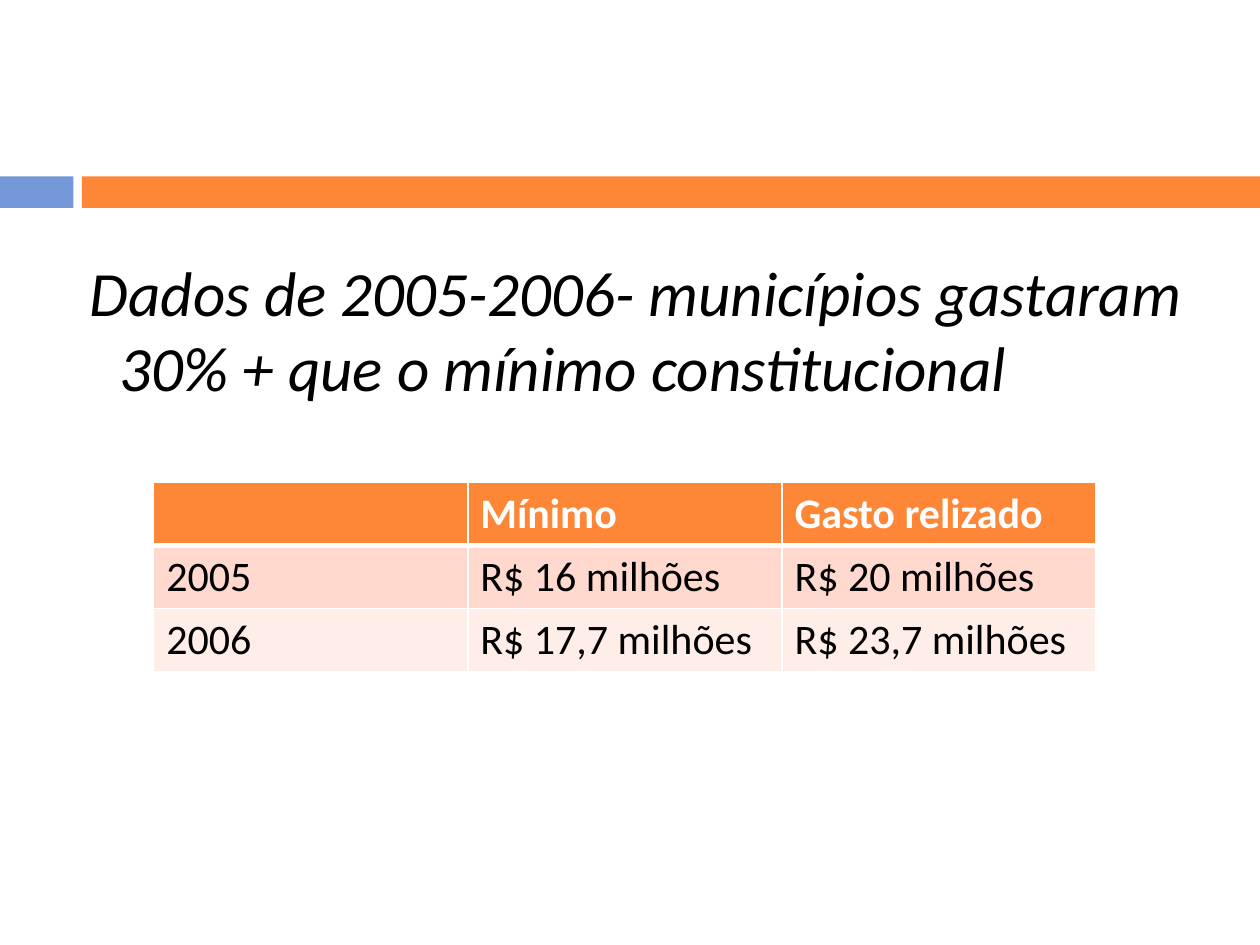
from pptx import Presentation
from pptx.dml.color import RGBColor
from pptx.enum.shapes import MSO_SHAPE
from pptx.enum.text import PP_ALIGN
from pptx.oxml.ns import qn
from pptx.util import Pt
from lxml.etree import SubElement

COLORS = {
    "blue": "7598D9",
    "orange": "FE8637",
    "peach": "FFD9CE",
    "blush": "FFEDE8",
    "black": "000000",
    "white": "FFFFFF",
}
FONT = "Calibri"
HEADLINE = " Dados de 2005-2006- municípios gastaram 30% + que o mínimo constitucional"
SPENDING = [
    ("", "Mínimo", "Gasto relizado"),
    ("2005", "R$ 16 milhões", "R$ 20 milhões"),
    ("2006", "R$ 17,7 milhões", "R$ 23,7 milhões"),
]
ROW_FILLS = ["orange", "peach", "blush"]
BANDS = [("blue", 0, 42), ("orange", 46.8, 673.2)]
BAND_TOP, BAND_HEIGHT = 100.8, 18
TABLE_LEFT, TABLE_TOP = 87.84, 275.76
COLUMN_WIDTH, ROW_HEIGHT = 179.5, 36


def color(name):
    return RGBColor.from_string(COLORS[name])


def write(frame, text, size=24, ink="black", bold=False, italic=False):
    para = frame.paragraphs[0]
    para.alignment = PP_ALIGN.LEFT
    span = para.add_run()
    span.text = text
    span.font.name = FONT
    span.font.size = Pt(size)
    span.font.bold = bold
    span.font.italic = italic
    span.font.color.rgb = color(ink)
    return para


def add_band(page, fill, left, width):
    band = page.shapes.add_shape(
        MSO_SHAPE.RECTANGLE, Pt(left), Pt(BAND_TOP), Pt(width), Pt(BAND_HEIGHT)
    )
    band.shadow.inherit = False
    band.fill.solid()
    band.fill.fore_color.rgb = color(fill)
    band.line.fill.background()


def add_headline(page):
    box = page.shapes.add_textbox(Pt(36), Pt(141.12), Pt(661.68), Pt(128.88))
    box.text_frame.word_wrap = True
    para = write(box.text_frame, HEADLINE, size=36, italic=True)
    para.space_before = Pt(7)
    properties = para._p.get_or_add_pPr()
    properties.set("marL", str(Pt(25.2)))
    properties.set("indent", str(Pt(-25.2)))


def set_borders(cell, widths):
    properties = cell._tc.get_or_add_tcPr()
    for position, (side, width) in enumerate(widths.items()):
        line = SubElement(properties, qn(f"a:{side}"), w=str(Pt(width)))
        fill = SubElement(line, qn("a:solidFill"))
        SubElement(fill, qn("a:srgbClr"), val=COLORS["white"])
        properties.remove(line)
        properties.insert(position, line)


def add_spending_table(page):
    rows, columns = len(SPENDING), len(SPENDING[0])
    table = page.shapes.add_table(
        rows, columns, Pt(TABLE_LEFT), Pt(TABLE_TOP),
        Pt(columns * COLUMN_WIDTH), Pt(rows * ROW_HEIGHT),
    ).table
    for column in table.columns:
        column.width = Pt(COLUMN_WIDTH)
    for index, values in enumerate(SPENDING):
        table.rows[index].height = Pt(ROW_HEIGHT)
        header = index == 0
        for cell, value in zip(table.rows[index].cells, values):
            cell.fill.solid()
            cell.fill.fore_color.rgb = color(ROW_FILLS[index])
            set_borders(cell, {
                "lnL": 1,
                "lnR": 1,
                "lnT": 3 if index == 1 else 1,
                "lnB": 3 if header else 1,
            })
            if value:
                write(cell.text_frame, value, bold=header,
                      ink="white" if header else "black")


def main():
    deck = Presentation()
    deck.slide_width, deck.slide_height = Pt(720), Pt(540)
    page = deck.slides.add_slide(deck.slide_layouts[6])
    for band in BANDS:
        add_band(page, *band)
    add_headline(page)
    add_spending_table(page)
    deck.save("out.pptx")


if __name__ == "__main__":
    main()
